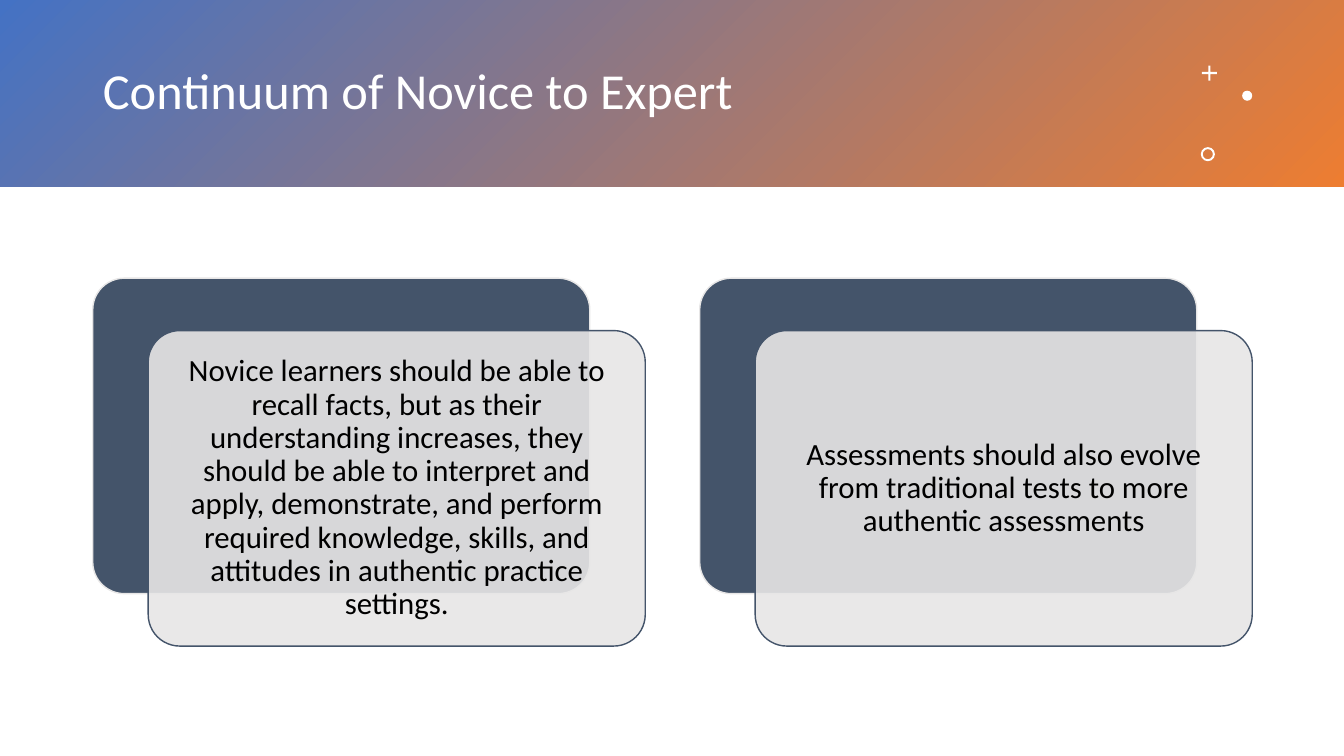
from lxml import etree
from pptx import Presentation
from pptx.dml.color import RGBColor
from pptx.enum import shapes, text
from pptx.oxml.ns import qn
from pptx.util import Inches, Pt

FONT = "Calibri"
WHITE = RGBColor(0xFF, 0xFF, 0xFF)
BLACK = RGBColor(0x00, 0x00, 0x00)
BLUE = RGBColor(0x44, 0x72, 0xC4)
ORANGE = RGBColor(0xED, 0x7D, 0x31)
SLATE = RGBColor(0x44, 0x54, 0x6A)
PALE = RGBColor(0xE7, 0xE6, 0xE6)

SLIDE_W, SLIDE_H = 13.33, 7.5
HEADER_H = 1.85
CARD_W, CARD_H = 4.93, 3.13
CARD_SHIFT = (0.55, 0.52)
CARD_LEFT, CARD_TOP, CARD_PITCH = 0.92, 2.76, 6.02
TEXT_INSET = 0.09

STATEMENTS = [
    "Novice learners should be able to recall facts, but as their understanding "
    "increases, they should be able to interpret and apply, demonstrate, and perform "
    "required knowledge, skills, and attitudes in authentic practice settings.",
    "Assessments should also evolve from traditional tests to more authentic assessments",
]


def add_plain(slide, kind, box, fill=None, line=None, adjust=None):
    """Add a preset shape without shadow; box is left, top, width, height."""
    shape = slide.shapes.add_shape(kind, *map(Inches, box))
    shape.shadow.inherit = False
    if fill is not None:
        shape.fill.solid()
        shape.fill.fore_color.rgb = fill
    if line is None:
        shape.line.fill.background()
    else:
        shape.line.color.rgb = line
        shape.line.width = Pt(1)
    if adjust is not None:
        shape.adjustments[0] = adjust
    return shape


def set_words(frame, words, size, color, align):
    frame.text = words
    frame.word_wrap = True
    frame.auto_size = text.MSO_AUTO_SIZE.NONE
    frame.vertical_anchor = text.MSO_ANCHOR.MIDDLE
    paragraph = frame.paragraphs[0]
    paragraph.alignment = align
    paragraph.line_spacing = 0.9
    font = paragraph.runs[0].font
    font.name, font.size, font.color.rgb = FONT, Pt(size), color


def build_header(slide, left, top, width, height):
    # Gradient band, placed behind the title
    band = add_plain(slide, shapes.MSO_SHAPE.RECTANGLE, (left, top, width, height))
    band.fill.gradient()
    band.fill.gradient_angle = 315
    for stop, color in zip(band.fill.gradient_stops, (BLUE, ORANGE)):
        stop.color.rgb = color
    title = slide.shapes.title
    title.element.addprevious(band.element)

    # Title
    title.left, title.top = Inches(left + 0.92), Inches(top + 0.33)
    title.width, title.height = Inches(10.75), Inches(1.19)
    set_words(title.text_frame, "Continuum of Novice to Expert", 36, WHITE,
              text.PP_ALIGN.LEFT)

    # Plus, dot and ring ornaments
    ornaments = [
        (shapes.MSO_SHAPE.CROSS, 11.92, 0.65, 0.15, 0.43),
        (shapes.MSO_SHAPE.OVAL, 12.32, 0.9, 0.1, None),
        (shapes.MSO_SHAPE.DONUT, 11.91, 1.46, 0.14, 0.14),
    ]
    for kind, x, y, size, adjust in ornaments:
        add_plain(slide, kind, (left + x, top + y, size, size), WHITE, adjust=adjust)


def build_card(slide, left, top, width, height, statement):
    # Dark card at the back
    rounded = shapes.MSO_SHAPE.ROUNDED_RECTANGLE
    add_plain(slide, rounded, (left, top, width, height), SLATE, PALE, 0.1)

    # Translucent card in front
    x, y = left + CARD_SHIFT[0], top + CARD_SHIFT[1]
    front = add_plain(slide, rounded, (x, y, width, height), PALE, SLATE, 0.1)
    fill_color = front.element.spPr.find(qn("a:solidFill")).find(qn("a:srgbClr"))
    etree.SubElement(fill_color, qn("a:alpha")).set("val", "90000")

    # Statement
    box = (x + TEXT_INSET, y + TEXT_INSET, width - 2 * TEXT_INSET, height - 2 * TEXT_INSET)
    frame = slide.shapes.add_textbox(*map(Inches, box)).text_frame
    frame.margin_left = frame.margin_right = Inches(TEXT_INSET)
    frame.margin_top = frame.margin_bottom = Inches(TEXT_INSET)
    set_words(frame, statement, 22, BLACK, text.PP_ALIGN.CENTER)


def main():
    deck = Presentation()
    deck.slide_width, deck.slide_height = Inches(SLIDE_W), Inches(SLIDE_H)
    slide = deck.slides.add_slide(deck.slide_layouts[5])
    build_header(slide, 0, 0, SLIDE_W, HEADER_H)
    for i, statement in enumerate(STATEMENTS):
        build_card(slide, CARD_LEFT + i * CARD_PITCH, CARD_TOP, CARD_W, CARD_H, statement)
    deck.save("out.pptx")


if __name__ == "__main__":
    main()
